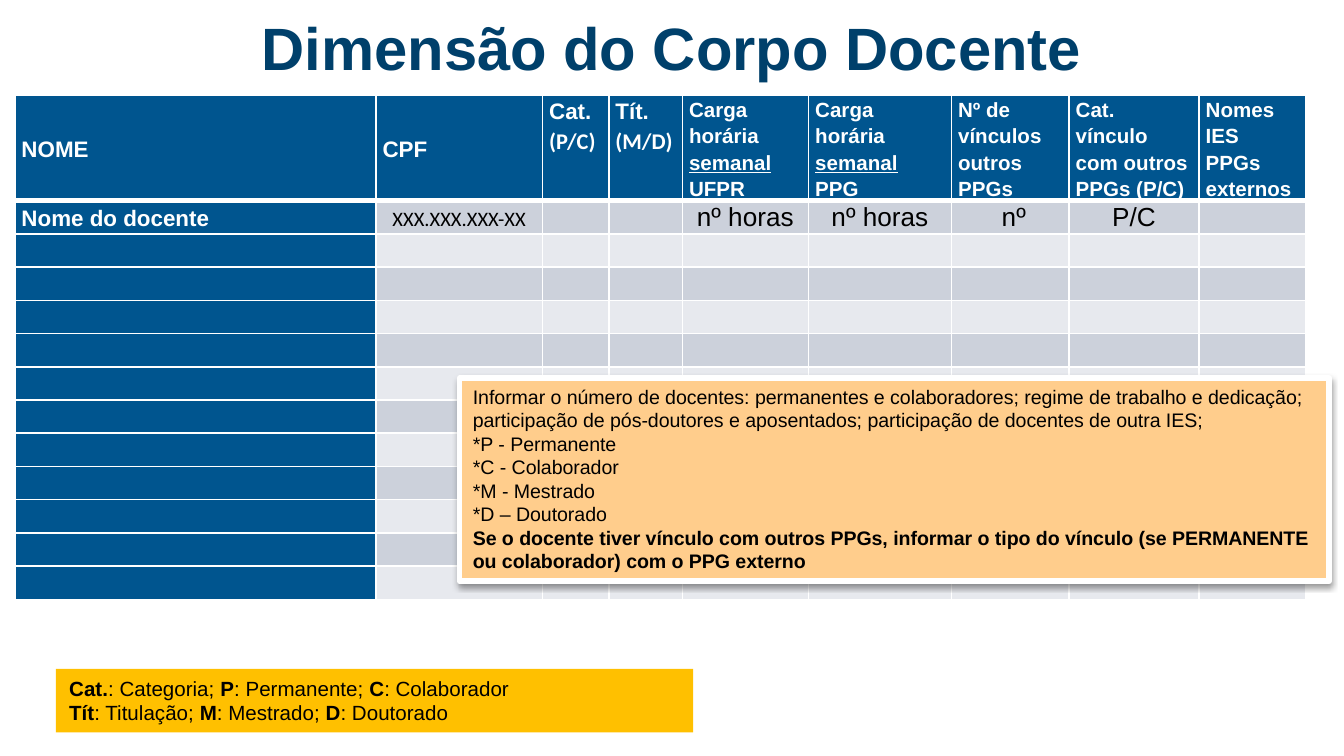
from dataclasses import dataclass, replace

from lxml.etree import SubElement
from pptx import Presentation
from pptx.dml.color import RGBColor
from pptx.enum.shapes import MSO_SHAPE
from pptx.enum.text import MSO_ANCHOR, MSO_AUTO_SIZE, PP_ALIGN
from pptx.oxml.ns import qn
from pptx.util import Inches, Pt

WIDE = Inches(10)
HIGH = WIDE * 9 // 16
BLUE, NAVY, WHITE, BLACK = "00558F", "00406B", "FFFFFF", "000000"
BANDS = "CCD1DB", "E7E9EE"
COLS = 26.87, 12.4, 4.93, 5.48, 9.39, 10.63, 8.75, 9.68, 7.93
HEAD, ROW, COUNT = 13.7, 4.4, 12


@dataclass(frozen=True)
class Run:
    text: str
    size: float = 11
    bold: bool = False
    line: bool = False
    font: str = "Arial"
    color: str = BLACK


@dataclass(frozen=True)
class Cell:
    paras: tuple
    mid: bool = False
    center: bool = False
    lead: float | None = None


@dataclass(frozen=True)
class Box:
    """Place and size in percent of the slide."""
    left: float
    top: float
    width: float
    height: float

    def spots(self) -> tuple:
        return across(self.left), down(self.top), across(self.width), down(self.height)


def across(share: float) -> int:
    return round(WIDE * share / 100)


def down(share: float) -> int:
    return round(HIGH * share / 100)


def rgb(code: str) -> RGBColor:
    return RGBColor.from_string(code)


def paint(thing, code: str) -> None:
    thing.fill.solid()
    thing.fill.fore_color.rgb = rgb(code)


def write(frame, paras, align=PP_ALIGN.LEFT, lead=None) -> None:
    for i, runs in enumerate(paras):
        para = frame.add_paragraph() if i else frame.paragraphs[0]
        para.alignment = align
        if lead:
            para.line_spacing = lead
        for item in runs:
            run = para.add_run()
            run.text = item.text
            font = run.font
            font.size, font.name = Pt(item.size), item.font
            font.bold, font.underline = item.bold, item.line
            font.color.rgb = rgb(item.color)


def edge(cell, top: float, bottom: float) -> None:
    """White cell borders, widths in points."""
    props = cell._tc.get_or_add_tcPr()
    for side, width in zip("LRTB", (1, 1, top, bottom)):
        line = SubElement(props, qn(f"a:ln{side}"), w=str(Pt(width)))
        fill = SubElement(line, qn("a:solidFill"))
        SubElement(fill, qn("a:srgbClr"), val=WHITE)


def fill_cell(cell, data: Cell | None, color: str, row: int) -> None:
    edge(cell, 3 if row == 1 else 1, 1 if row else 3)
    paint(cell, color)
    cell.margin_left = cell.margin_right = Inches(0.05)
    cell.margin_top = cell.margin_bottom = 0
    if data:
        cell.vertical_anchor = MSO_ANCHOR.MIDDLE if data.mid else MSO_ANCHOR.TOP
        align = PP_ALIGN.CENTER if data.center else PP_ALIGN.LEFT
        write(cell.text_frame, data.paras, align, data.lead)
    else:
        # Keeps an empty cell from stretching its row
        para = cell.text_frame.paragraphs[0]
        SubElement(para._p, qn("a:endParaRPr"), sz="1100")


def draw_table(slide, box: Box, rows: list) -> None:
    grid = slide.shapes.add_table(COUNT + 1, len(COLS), *box.spots()).table
    for col, share in zip(grid.columns, COLS):
        col.width = across(share)
    for r, row in enumerate(grid.rows):
        row.height = down(ROW if r else HEAD)
        data = rows[r] if r < len(rows) else [None] * len(COLS)
        for c, cell in enumerate(row.cells):
            color = BLUE if r == 0 or c == 0 else BANDS[(r - 1) % 2]
            fill_cell(cell, data[c], color, r)


def draw_panel(slide, box: Box, color: str, paras):
    panel = slide.shapes.add_shape(MSO_SHAPE.RECTANGLE, *box.spots())
    paint(panel, color)
    panel.line.fill.background()
    panel.shadow.inherit = False
    frame = panel.text_frame
    frame.word_wrap = True
    frame.auto_size = MSO_AUTO_SIZE.SHAPE_TO_FIT_TEXT
    frame.vertical_anchor = MSO_ANCHOR.TOP
    write(frame, paras)
    return panel


def frame_panel(panel) -> None:
    """White outline with a soft shadow below."""
    panel.line.color.rgb = rgb(WHITE)
    panel.line.width = Pt(3)
    effects = panel._element.spPr.find(qn("a:effectLst"))
    shade = SubElement(effects, qn("a:outerShdw"), blurRad=str(Pt(3.1)),
                       dist=str(Pt(1.6)), dir="5400000", rotWithShape="0")
    tint = SubElement(shade, qn("a:srgbClr"), val=BLACK)
    SubElement(tint, qn("a:alpha"), val="38000")


def draw_title(slide, box: Box, text: str) -> None:
    frame = slide.shapes.add_textbox(*box.spots()).text_frame
    frame.word_wrap = True
    frame.vertical_anchor = MSO_ANCHOR.BOTTOM
    frame.margin_top = frame.margin_bottom = Inches(0.1)
    write(frame, [[Run(text, 32, True, color=NAVY)]], PP_ALIGN.CENTER)


def small(text: str) -> Run:
    return Run(text, 11, True, color=WHITE)


def large(text: str) -> Run:
    return Run(text, 12, True, color=WHITE)


def head(*paras: tuple, mid: bool = False) -> Cell:
    return Cell(paras, mid, lead=1.15)


def hours(unit: str) -> Cell:
    return head((small("Carga horária "), replace(small("semanal"), line=True),
                 small(f" {unit}")))


def code(name: str, kinds: str) -> Cell:
    return head((large(name),), (replace(large(kinds), font="Calibri"),))


def value(text: str) -> Cell:
    return Cell(((Run(text, 14),),), True, True)


def legend(*pairs: tuple) -> list:
    """Bold keys, each with its plain meaning."""
    last = len(pairs) - 1
    return [run for i, (key, text) in enumerate(pairs)
            for run in (Run(key, bold=True), Run(f": {text}" + ("; " if i < last else "")))]


def main() -> None:
    deck = Presentation()
    deck.slide_width, deck.slide_height = WIDE, HIGH
    slide = deck.slides.add_slide(deck.slide_layouts[6])

    labels = ("Nº de vínculos outros PPGs", "Cat. vínculo com outros PPGs (P/C)",
              "Nomes IES PPGs externos")
    top = [head((large("NOME"),), mid=True), head((large("CPF"),), mid=True),
           code("Cat.", "(P/C)"), code("Tít.", "(M/D)"), hours("UFPR"), hours("PPG"),
           *(head((small(text),)) for text in labels)]
    sample = [head((large("Nome do docente"),), mid=True),
              Cell(((Run("XXX.XXX.XXX-XX", font="Calibri"),),), True, True, 1.15),
              None, None, *map(value, ("nº horas", "nº horas", " nº", "P/C")), None]
    draw_table(slide, Box(1.1, 12.65, sum(COLS), HEAD + COUNT * ROW), [top, sample])

    draw_title(slide, Box(2.85, 2.4, 94.3, 10.3), "Dimensão do Corpo Docente")

    notes = ("Informar o número de docentes: permanentes e colaboradores; regime de "
             "trabalho e dedicação; participação de pós-doutores e aposentados; "
             "participação de docentes de outra IES;",
             "*P - Permanente", "*C - Colaborador", "*M - Mestrado", "*D – Doutorado")
    final = ("Se o docente tiver vínculo com outros PPGs, informar o tipo do vínculo "
             "(se PERMANENTE ou colaborador) com o PPG externo")
    paras = [[Run(text, 10.5)] for text in notes] + [[Run(final, 10.5, True)]]
    frame_panel(draw_panel(slide, Box(34.2, 50, 64.7, 26.9), "FFCD8C", paras))

    draw_panel(slide, Box(4.17, 88.5, 47.4, 8.4), "FFC000", [
        legend(("Cat.", "Categoria"), ("P", "Permanente"), ("C", "Colaborador")),
        legend(("Tít", "Titulação"), ("M", "Mestrado"), ("D", "Doutorado"))])
    deck.save("out.pptx")


if __name__ == "__main__":
    main()
